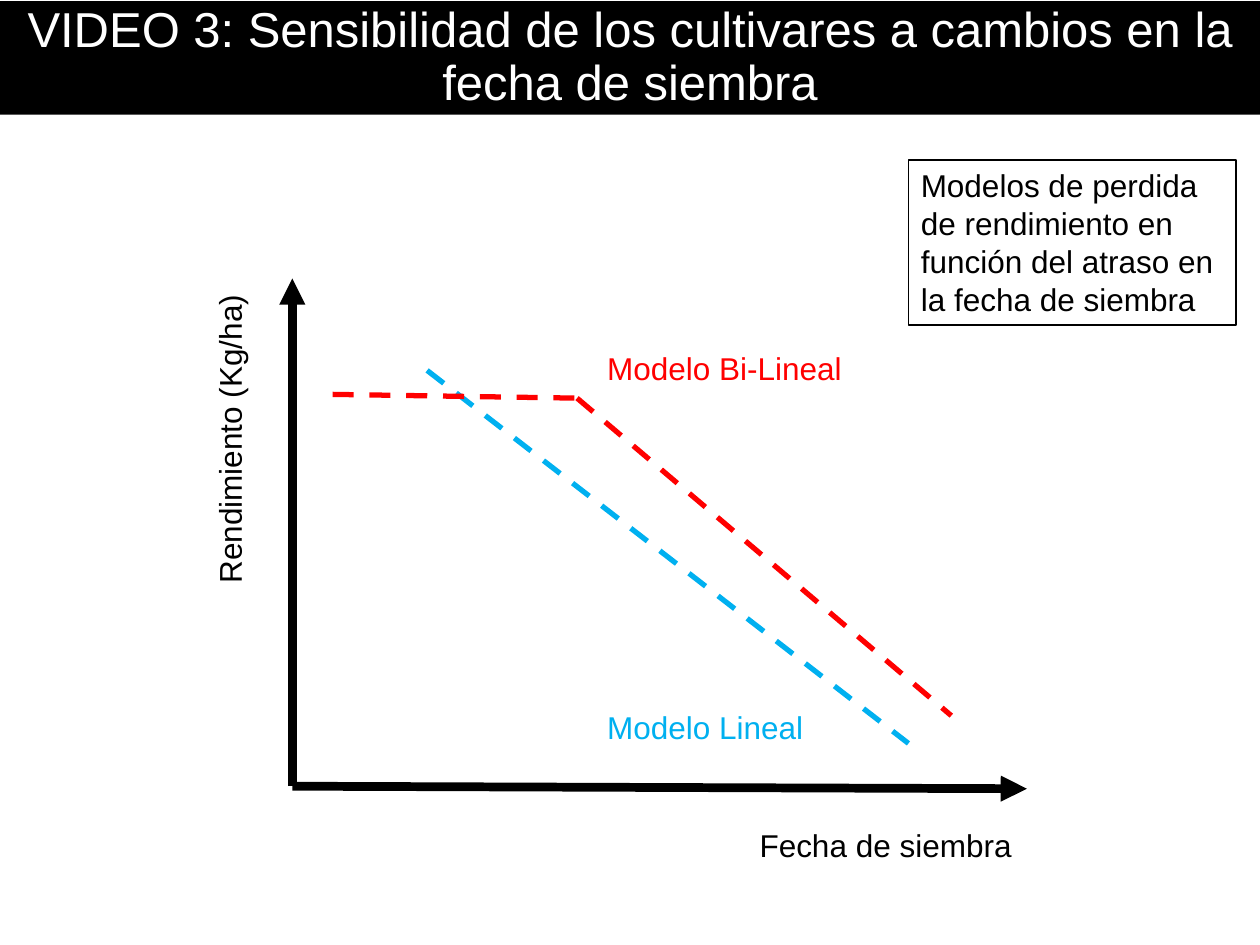
from lxml import etree
from pptx import Presentation
from pptx.dml.color import RGBColor
from pptx.enum.dml import MSO_LINE
from pptx.enum.shapes import MSO_CONNECTOR, MSO_SHAPE
from pptx.enum.text import MSO_ANCHOR, MSO_AUTO_SIZE, PP_ALIGN
from pptx.oxml.ns import qn
from pptx.util import Inches, Pt

STRAIGHT, RECTANGLE, DASH = MSO_CONNECTOR.STRAIGHT, MSO_SHAPE.RECTANGLE, MSO_LINE.DASH
TOP, MIDDLE = MSO_ANCHOR.TOP, MSO_ANCHOR.MIDDLE
LEFT, CENTER = PP_ALIGN.LEFT, PP_ALIGN.CENTER
GROW = MSO_AUTO_SIZE.SHAPE_TO_FIT_TEXT

THEME = {
    "font": "Arial", "title_size": 28, "text_size": 18,
    "axis_width": 5, "model_width": 3, "frame_width": 0.75,
    "ink": RGBColor(0, 0, 0), "paper": RGBColor(255, 255, 255),
    "linear": RGBColor(0, 176, 240), "bilinear": RGBColor(255, 0, 0),
}

# Content, placed on a grid of 100 columns by 75 rows
COLUMNS, ROWS = 100, 75
WIDTH, HEIGHT = Inches(10), Inches(7.5)

TITLE = ("VIDEO 3: Sensibilidad de los cultivares a cambios en la fecha de siembra",
         (0, 0.1, 100, 9))
NOTE = ("Modelos de perdida de rendimiento en función del atraso en la fecha de siembra",
        (72.1, 12.7, 26, 13.1))
ORIGIN = (23.2, 62.4)
AXES = [
    {"text": "Rendimiento (Kg/ha)", "place": (5.6, 32.7, 25.2, 4), "turn": 270,
     "end": (23.2, 22.1)},
    {"text": "Fecha de siembra", "place": (59.3, 65.1, 22.2, 4), "turn": 0,
     "end": (81.5, 62.6)},
]
MODELS = [
    {"text": "Modelo Lineal", "place": (47.2, 55.7, 17.7, 4.1), "color": "linear",
     "points": [(33.9, 29.4), (72.1, 59)]},
    {"text": "Modelo Bi-Lineal", "place": (47.2, 27.2, 21, 4), "color": "bilinear",
     "points": [(26.4, 31.3), (45.8, 31.6), (75.5, 56.8)]},
]


def to_slide(*cells):
    """Turn alternating column and row values into slide lengths."""
    units = (WIDTH / COLUMNS, HEIGHT / ROWS)
    return [round(cell * units[index % 2]) for index, cell in enumerate(cells)]


def write(box, text, color="ink", size="text_size", align=LEFT, spacing=None,
          **frame_format):
    frame = box.text_frame
    settings = {"word_wrap": True, "vertical_anchor": TOP, **frame_format}
    for name, value in settings.items():
        setattr(frame, name, value)
    para = frame.paragraphs[0]
    para.alignment, para.line_spacing = align, spacing
    span = para.add_run()
    span.text = text
    font_format = {"name": THEME["font"], "size": Pt(THEME[size])}
    for name, value in font_format.items():
        setattr(span.font, name, value)
    span.font.color.rgb = THEME[color]


def add_label(page, text, place, color="ink", wrap=True, turn=0):
    box = page.shapes.add_textbox(*to_slide(*place))
    box.rotation = turn
    write(box, text, color, word_wrap=wrap, auto_size=GROW)


def add_panel(page, place):
    panel = page.shapes.add_shape(RECTANGLE, *to_slide(*place))
    panel.shadow.inherit = False
    return panel


def add_line(page, start, end, color, width, dash=None, arrow=False):
    line = page.shapes.add_connector(STRAIGHT, *to_slide(*start, *end))
    line.line.color.rgb = THEME[color]
    line.line.width = Pt(THEME[width])
    if dash:
        line.line.dash_style = dash
    if arrow:
        etree.SubElement(line.line._get_or_add_ln(), qn("a:tailEnd"), type="triangle")
    etree.SubElement(line._element.spPr, qn("a:effectLst"))


def build():
    deck = Presentation()
    deck.slide_width, deck.slide_height = WIDTH, HEIGHT
    page = deck.slides.add_slide(deck.slide_layouts[6])

    # Title band
    text, place = TITLE
    band = add_panel(page, place)
    band.fill.solid()
    band.fill.fore_color.rgb = THEME["ink"]
    band.line.fill.background()
    write(band, text, "paper", "title_size", CENTER, 0.9, vertical_anchor=MIDDLE)

    # Axes and their names
    for axis in AXES:
        add_line(page, ORIGIN, axis["end"], "ink", "axis_width", arrow=True)
        add_label(page, axis["text"], axis["place"], wrap=False, turn=axis["turn"])

    # Yield loss models
    for model in MODELS:
        points = model["points"]
        for start, end in zip(points, points[1:]):
            add_line(page, start, end, model["color"], "model_width", dash=DASH)
        add_label(page, model["text"], model["place"], model["color"])

    # Framed note
    text, place = NOTE
    note = add_panel(page, place)
    note.fill.background()
    note.line.color.rgb = THEME["ink"]
    note.line.width = Pt(THEME["frame_width"])
    write(note, text, auto_size=GROW)

    deck.save("out.pptx")


if __name__ == "__main__":
    build()
